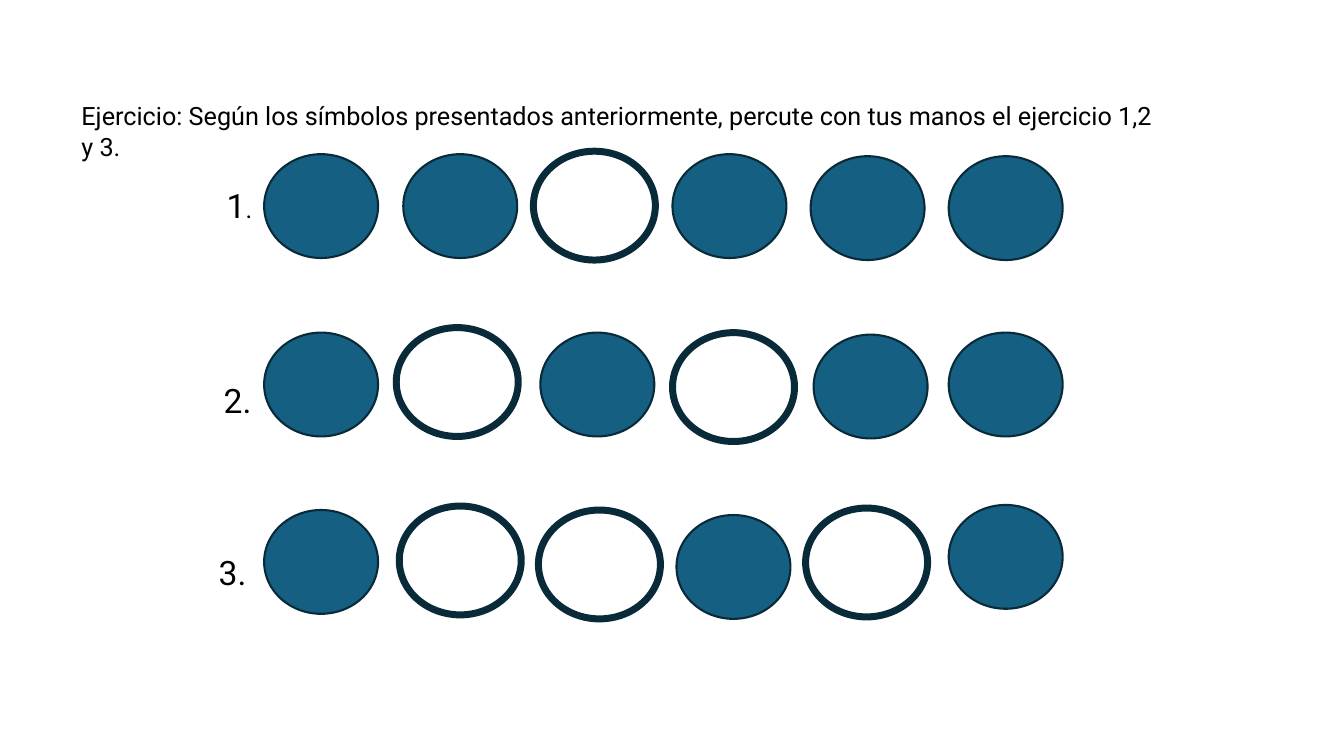
from dataclasses import dataclass

import pptx
import pptx.dml.color
import pptx.enum.shapes
import pptx.enum.text
import pptx.util
from pptx.util import Inches

FONT = "Roboto"
INK, BLUE, NAVY = "000000", "156082", "092A39"


@dataclass(frozen=True)
class Circle:
    left: float
    top: float
    filled: bool = True


@dataclass(frozen=True)
class Exercise:
    number: str
    left: float
    top: float
    width: float
    circles: tuple[Circle, ...]


EXERCISES = (
    Exercise("1.", 2.15, 1.79, 0.45, (
        Circle(2.62, 1.53), Circle(4, 1.53), Circle(5.29, 1.5, False),
        Circle(6.67, 1.53), Circle(8.04, 1.55), Circle(9.41, 1.55))),
    Exercise("2.", 2.12, 3.72, 0.48, (
        Circle(2.62, 3.3), Circle(3.93, 3.25, False), Circle(5.36, 3.3),
        Circle(6.67, 3.3, False), Circle(8.07, 3.32), Circle(9.41, 3.3))),
    Exercise("3.", 2.07, 5.43, 0.48, (
        Circle(2.62, 5.06), Circle(3.96, 5.02, False), Circle(5.34, 5.06, False),
        Circle(6.71, 5.11), Circle(7.99, 5.04, False), Circle(9.41, 5.01))),
)


def rgb(color: str) -> pptx.dml.color.RGBColor:
    return pptx.dml.color.RGBColor.from_string(color)


def add_circle(s: pptx.slide.Slide, circle: Circle) -> None:
    """Add a filled circle with a thin line, or a larger ring with a thick one."""
    width, height, line = (1.13, 1.03, 1.5) if circle.filled else (1.21, 1.08, 5)
    sp = s.shapes.add_shape(pptx.enum.shapes.MSO_SHAPE.OVAL, Inches(circle.left),
                            Inches(circle.top), Inches(width), Inches(height))
    sp.shadow.inherit = False
    if circle.filled:
        sp.fill.solid()
        sp.fill.fore_color.rgb = rgb(BLUE)
    else:
        sp.fill.background()
    sp.line.color.rgb = rgb(NAVY)
    sp.line.width = pptx.util.Pt(line)


def add_text(s: pptx.slide.Slide, left: float, top: float, width: float,
             height: float, parts: tuple[tuple[str, float], ...],
             wrap: bool = False) -> None:
    """Add a one-paragraph text box; each part is a text and its size."""
    sp = s.shapes.add_textbox(Inches(left), Inches(top), Inches(width), Inches(height))
    tf = sp.text_frame
    tf.word_wrap = wrap
    tf.auto_size = pptx.enum.text.MSO_AUTO_SIZE.SHAPE_TO_FIT_TEXT
    for text, size in parts:
        r = tf.paragraphs[0].add_run()
        r.text = text
        r.font.name = FONT
        r.font.size = pptx.util.Pt(size)
        r.font.color.rgb = rgb(INK)


def main() -> None:
    prs = pptx.Presentation()
    prs.slide_width, prs.slide_height = Inches(13.33), Inches(7.5)
    s = prs.slides.add_slide(prs.slide_layouts[6])

    # Numbered rows of circles
    for exercise in EXERCISES:
        for circle in exercise.circles:
            add_circle(s, circle)
        # The first number has a smaller dot
        if exercise.number == "1.":
            parts = (("1", 24), (".", 18))
        else:
            parts = ((exercise.number, 24),)
        add_text(s, exercise.left, exercise.top, exercise.width, 0.5, parts)

    # Instruction
    add_text(s, 0.71, 0.95, 10.9, 0.4, ((
        "Ejercicio: Según los símbolos presentados anteriormente, "
        "percute con tus manos el ejercicio 1,2 y 3.", 18),), wrap=True)

    prs.save("out.pptx")


if __name__ == "__main__":
    main()
